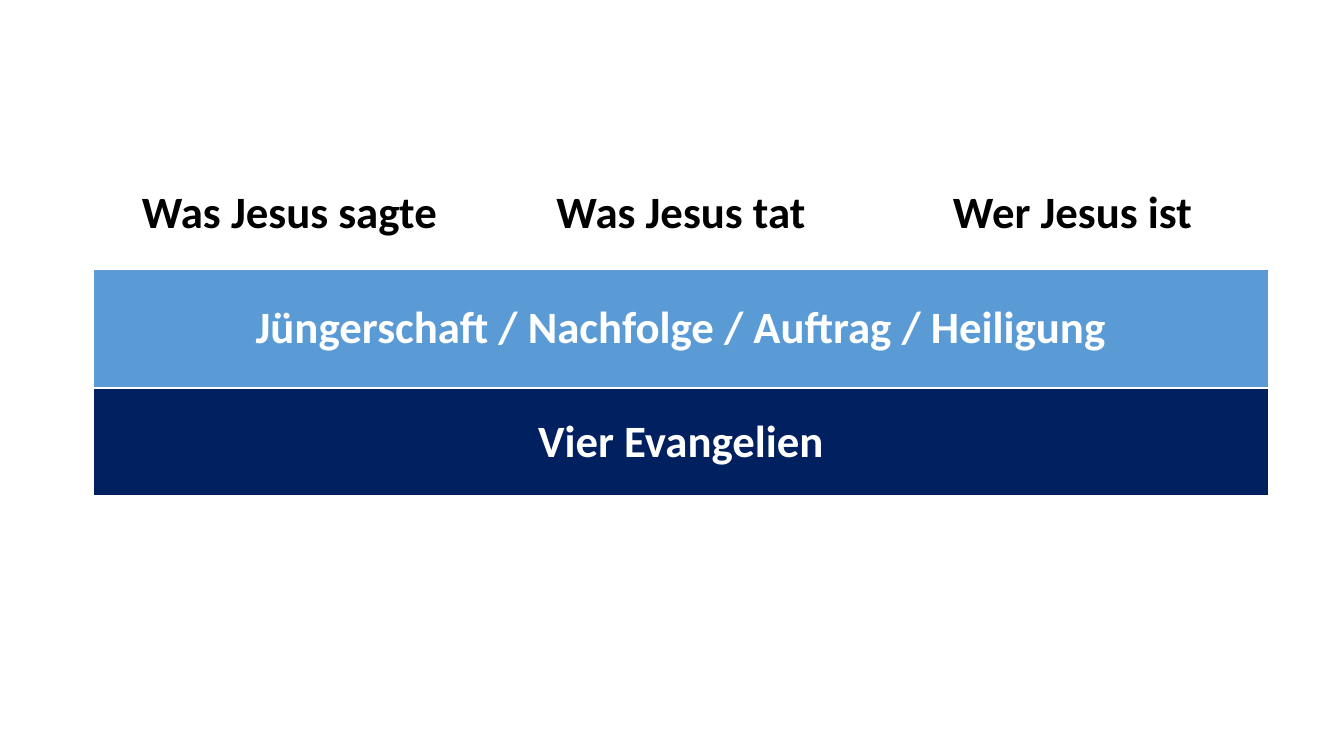
"""Build a slide with a table of three aspects of Jesus resting on the Gospels."""
from dataclasses import dataclass

from lxml import etree
from pptx import Presentation
from pptx import util as u
from pptx.dml.color import RGBColor
from pptx.enum import text
from pptx.oxml import ns
from pptx.table import Table, _Cell


@dataclass(frozen=True)
class Theme:
    """Colours, font and sizes of the slide."""
    white: str = "FFFFFF"
    black: str = "000000"
    blue: str = "5B9BD5"
    navy: str = "002060"
    font: str = "Calibri"
    size: float = 32
    thin: float = 1
    thick: float = 3


@dataclass(frozen=True)
class Band:
    """One table row whose labels share the full width."""
    labels: tuple[str, ...]
    height: float
    fill: str
    color: str
    bottom_width: float


THEME = Theme()
COLUMN_COUNT = 3
LEFT, TOP, WIDTH = 0.93, 1.58, 11.65
BANDS = (
    Band(("Was Jesus sagte", "Was Jesus tat", "Wer Jesus ist"),
         1.08, THEME.white, THEME.black, THEME.thick),
    Band(("Jüngerschaft / Nachfolge / Auftrag / Heiligung",),
         1.19, THEME.blue, THEME.white, THEME.thin),
    Band(("Vier Evangelien",), 1.07, THEME.navy, THEME.white, THEME.thin),
)


def set_borders(cell: _Cell, bottom_width: float) -> None:
    """Give a cell white borders with its own bottom width."""
    properties = cell._tc.get_or_add_tcPr()
    widths = {"lnL": THEME.thin, "lnR": THEME.thin, "lnT": THEME.thin, "lnB": bottom_width}
    for position, (side, width) in enumerate(widths.items()):
        line = etree.Element(ns.qn(f"a:{side}"), w=str(u.Pt(width)))
        fill = etree.SubElement(line, ns.qn("a:solidFill"))
        etree.SubElement(fill, ns.qn("a:srgbClr"), val=THEME.white)
        properties.insert(position, line)


def style_cell(cell: _Cell, band: Band) -> None:
    """Apply the fill, margins and borders of a band."""
    cell.fill.solid()
    cell.fill.fore_color.rgb = RGBColor.from_string(band.fill)
    cell.vertical_anchor = text.MSO_ANCHOR.MIDDLE
    cell.margin_left = cell.margin_right = u.Inches(0.14)
    cell.margin_top = cell.margin_bottom = 0
    set_borders(cell, band.bottom_width)


def write_label(cell: _Cell, label: str, color: str) -> None:
    """Write a centred bold label."""
    cell.text_frame.text = label
    paragraph = cell.text_frame.paragraphs[0]
    paragraph.alignment = text.PP_ALIGN.CENTER
    font = paragraph.runs[0].font
    font.name = THEME.font
    font.size = u.Pt(THEME.size)
    font.bold = True
    font.color.rgb = RGBColor.from_string(color)


def fill_band(table: Table, row: int, band: Band) -> None:
    """Fill one row, merging cells so that its labels span the table."""
    table.rows[row].height = u.Inches(band.height)
    for column in range(COLUMN_COUNT):
        style_cell(table.cell(row, column), band)
    span = COLUMN_COUNT // len(band.labels)
    for index, label in enumerate(band.labels):
        first = table.cell(row, index * span)
        if span > 1:
            first.merge(table.cell(row, (index + 1) * span - 1))
        write_label(first, label, band.color)


def main() -> None:
    """Create and save the presentation."""
    presentation = Presentation()
    presentation.slide_width = u.Inches(13.33)
    presentation.slide_height = u.Inches(7.5)
    slide = presentation.slides.add_slide(presentation.slide_layouts[6])
    height = sum(band.height for band in BANDS)
    table = slide.shapes.add_table(
        len(BANDS), COLUMN_COUNT, u.Inches(LEFT), u.Inches(TOP),
        u.Inches(WIDTH), u.Inches(height)).table
    table.horz_banding = False
    for row, band in enumerate(BANDS):
        fill_band(table, row, band)
    presentation.save("out.pptx")


if __name__ == "__main__":
    main()
